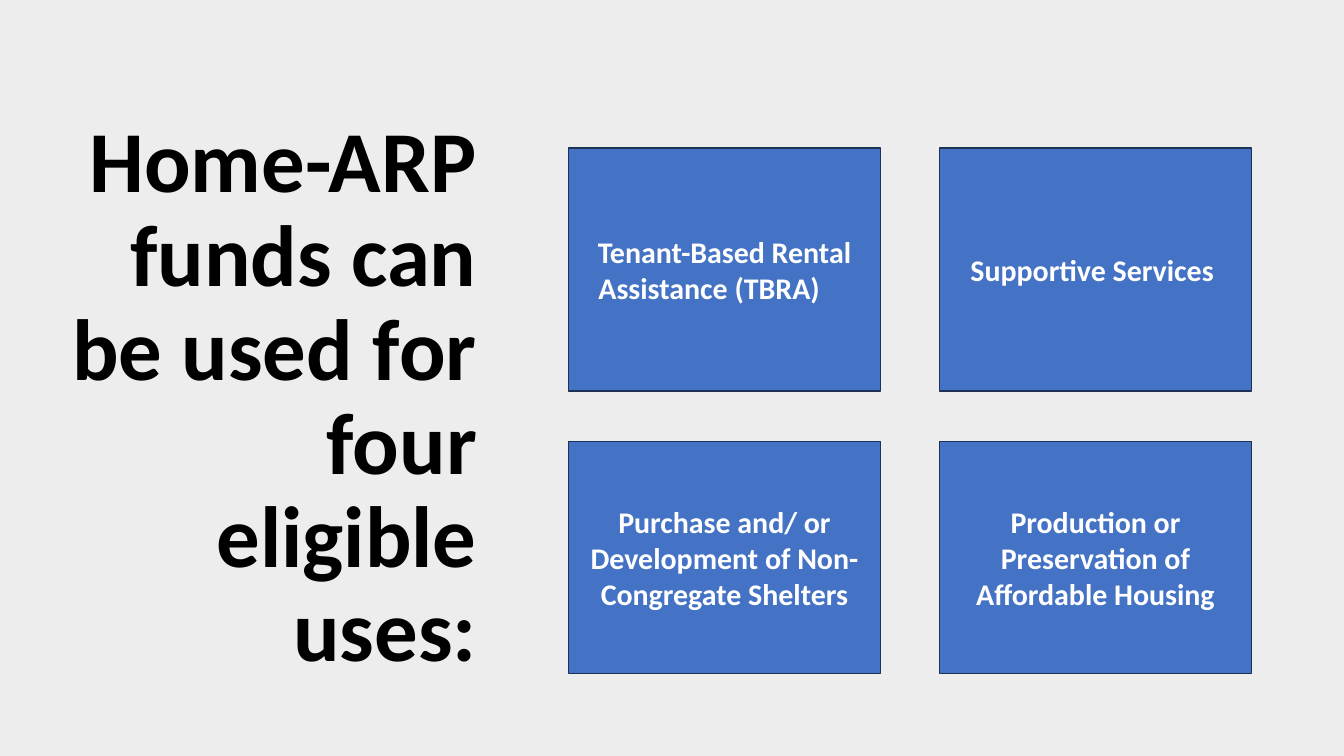
from pptx import Presentation
from pptx.dml.color import RGBColor
from pptx.enum.shapes import MSO_SHAPE
from pptx.enum.text import MSO_ANCHOR, PP_ALIGN
from pptx.util import Inches, Pt

COLORS = {
    "background": "EDEDED",
    "title": "000000",
    "card": "4472C4",
    "border": "1E3256",
    "card_text": "FFFFFF",
}
FONT = "Calibri"
COLUMNS = (5.64, 9.32)
CARD_WIDTH = 3.09
ROWS = (
    (1.47, 2.41, ("Tenant-Based Rental Assistance (TBRA)\t", "Supportive Services ")),
    (4.38, 2.3, ("Purchase and/ or Development of Non-Congregate Shelters",
                 "Production or Preservation of Affordable Housing")),
)


def color(name):
    """Return the named colour."""
    return RGBColor.from_string(COLORS[name])


def write(sp, text, size, color_name, align):
    """Put one bold, vertically centred paragraph into a shape."""
    tf = sp.text_frame
    tf.word_wrap = True
    tf.vertical_anchor = MSO_ANCHOR.MIDDLE
    p = tf.paragraphs[0]
    p.alignment = align
    r = p.add_run()
    r.text = text
    r.font.name = FONT
    r.font.size = Pt(size)
    r.font.bold = True
    r.font.color.rgb = color(color_name)
    return p


def add_title(s, text):
    """Add the right-aligned title."""
    sp = s.shapes.add_textbox(Inches(0.52), Inches(1.17), Inches(4.31), Inches(5.58))
    p = write(sp, text, 62, "title", PP_ALIGN.RIGHT)
    p.line_spacing = 0.9


def add_card(s, left, top, height, text):
    """Add one card naming an eligible use."""
    sp = s.shapes.add_shape(MSO_SHAPE.RECTANGLE, Inches(left), Inches(top),
                            Inches(CARD_WIDTH), Inches(height))
    sp.shadow.inherit = False
    sp.fill.solid()
    sp.fill.fore_color.rgb = color("card")
    sp.line.color.rgb = color("border")
    sp.line.width = Pt(1)
    p = write(sp, text, 21.4, "card_text", PP_ALIGN.CENTER)
    p.space_after = Pt(4.9)


def main():
    """Build and save the slide."""
    prs = Presentation()
    prs.slide_width = Inches(13.33)
    prs.slide_height = Inches(7.5)
    s = prs.slides.add_slide(prs.slide_layouts[6])
    s.background.fill.solid()
    s.background.fill.fore_color.rgb = color("background")
    add_title(s, "Home-ARP funds can be used for four eligible uses:")
    for top, height, uses in ROWS:
        for left, use in zip(COLUMNS, uses):
            add_card(s, left, top, height, use)
    prs.save("out.pptx")


if __name__ == "__main__":
    main()
